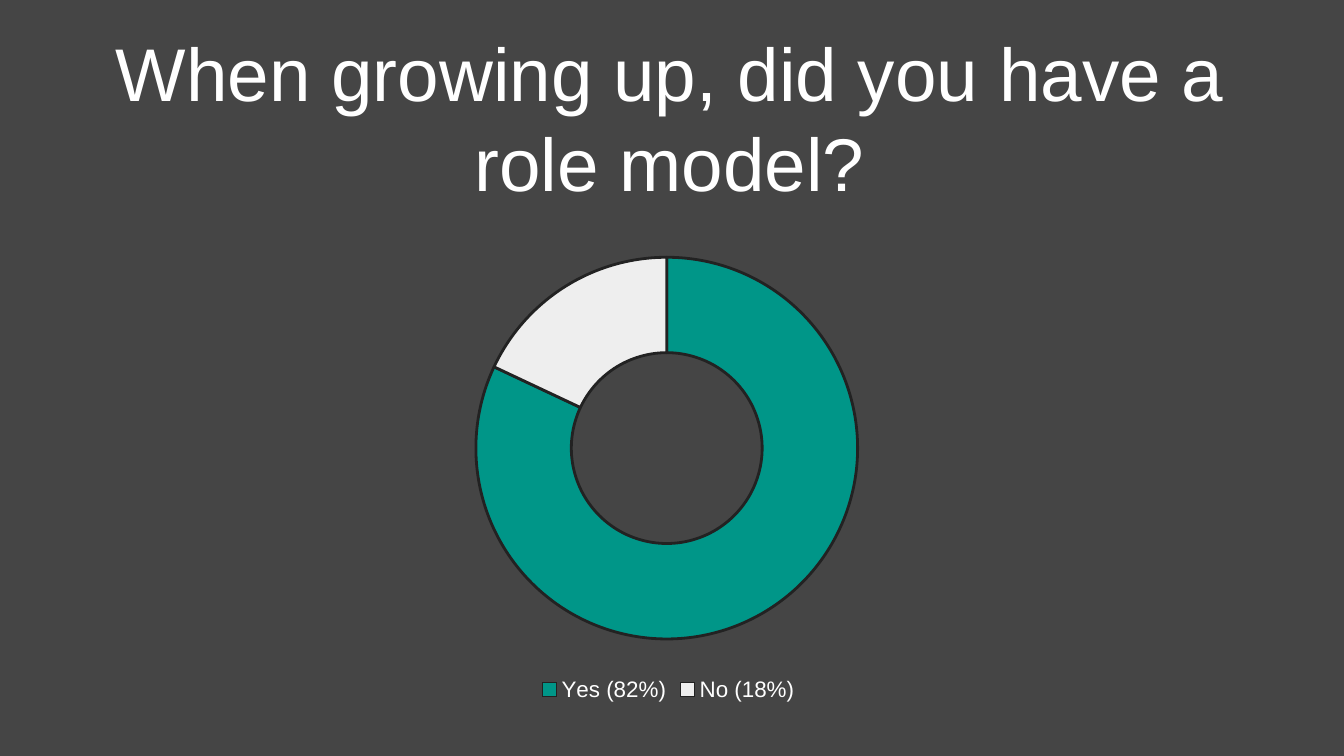
import dataclasses

import pptx
import pptx.chart.data
import pptx.dml.color
import pptx.enum.chart
import pptx.enum.text
import pptx.oxml
import pptx.oxml.ns
import pptx.util

WIDTH = pptx.util.Inches(10)
HEIGHT = WIDTH * 9 // 16


@dataclasses.dataclass(frozen=True)
class Theme:
    font: str = "Arial"
    background: str = "454545"
    text: str = "FFFFFF"
    outline: str = "222222"
    slices: tuple = ("009688", "EEEEEE")
    title_size: int = 40
    chart_size: int = 10
    legend_size: int = 12
    outline_width: float = 1.5


THEME = Theme()


def color(value):
    return pptx.dml.color.RGBColor.from_string(value)


def percent_area(left, top, width, height):
    return (int(WIDTH * left / 100), int(HEIGHT * top / 100),
            int(WIDTH * width / 100), int(HEIGHT * height / 100))


def paint(fill, value):
    fill.solid()
    fill.fore_color.rgb = color(value)


def style_font(font, size):
    font.name = THEME.font
    font.size = pptx.util.Pt(size)
    font.color.rgb = color(THEME.text)


def add_title(slide, text, area):
    frame = slide.shapes.add_textbox(*area).text_frame
    frame.word_wrap = True
    frame.vertical_anchor = pptx.enum.text.MSO_ANCHOR.TOP
    inset = pptx.util.Inches(0.1)
    frame.margin_left = frame.margin_right = inset
    frame.margin_top = frame.margin_bottom = inset
    paragraph = frame.paragraphs[0]
    paragraph.text = text
    paragraph.alignment = pptx.enum.text.PP_ALIGN.CENTER
    style_font(paragraph.font, THEME.title_size)


def place_plot(chart, left, top, width, height):
    plot_area = chart.element.find(".//" + pptx.oxml.ns.qn("c:plotArea"))
    for layout in plot_area.findall(pptx.oxml.ns.qn("c:layout")):
        plot_area.remove(layout)
    plot_area.insert(0, pptx.oxml.parse_xml(
        f'<c:layout {pptx.oxml.ns.nsdecls("c")}><c:manualLayout>'
        '<c:layoutTarget val="inner"/>'
        '<c:xMode val="edge"/><c:yMode val="edge"/>'
        f'<c:x val="{left / 100}"/><c:y val="{top / 100}"/>'
        f'<c:w val="{width / 100}"/><c:h val="{height / 100}"/>'
        '</c:manualLayout></c:layout>'))


def set_hole(chart, percent):
    hole = chart.element.find(".//" + pptx.oxml.ns.qn("c:holeSize"))
    hole.set("val", str(percent))


def add_doughnut(slide, answers, area):
    data = pptx.chart.data.CategoryChartData()
    data.categories = list(answers)
    data.add_series("Series 1", list(answers.values()))
    chart = slide.shapes.add_chart(
        pptx.enum.chart.XL_CHART_TYPE.DOUGHNUT, *area, data).chart
    style_font(chart.font, THEME.chart_size)
    chart.has_title = False
    chart.has_legend = True
    chart.legend.position = pptx.enum.chart.XL_LEGEND_POSITION.BOTTOM
    chart.legend.include_in_layout = False
    style_font(chart.legend.font, THEME.legend_size)
    plot = chart.plots[0]
    plot.vary_by_categories = True
    for index, value in enumerate(THEME.slices):
        slice_format = plot.series[0].points[index].format
        paint(slice_format.fill, value)
        slice_format.line.color.rgb = color(THEME.outline)
        slice_format.line.width = pptx.util.Pt(THEME.outline_width)
    place_plot(chart, 28.5, 4.4, 42.6, 81.2)
    set_hole(chart, 75)


def main():
    presentation = pptx.Presentation()
    presentation.slide_width = WIDTH
    presentation.slide_height = HEIGHT
    slide = presentation.slides.add_slide(presentation.slide_layouts[6])
    paint(slide.background.fill, THEME.background)
    add_title(slide, "When growing up, did you have a role model?",
              percent_area(3.2, 1.8, 93.2, 25.4))
    add_doughnut(slide, {"Yes (82%)": 82, "No (18%)": 18},
                 percent_area(16.4, 31.3, 66.7, 62.2))
    presentation.save("out.pptx")


if __name__ == "__main__":
    main()
